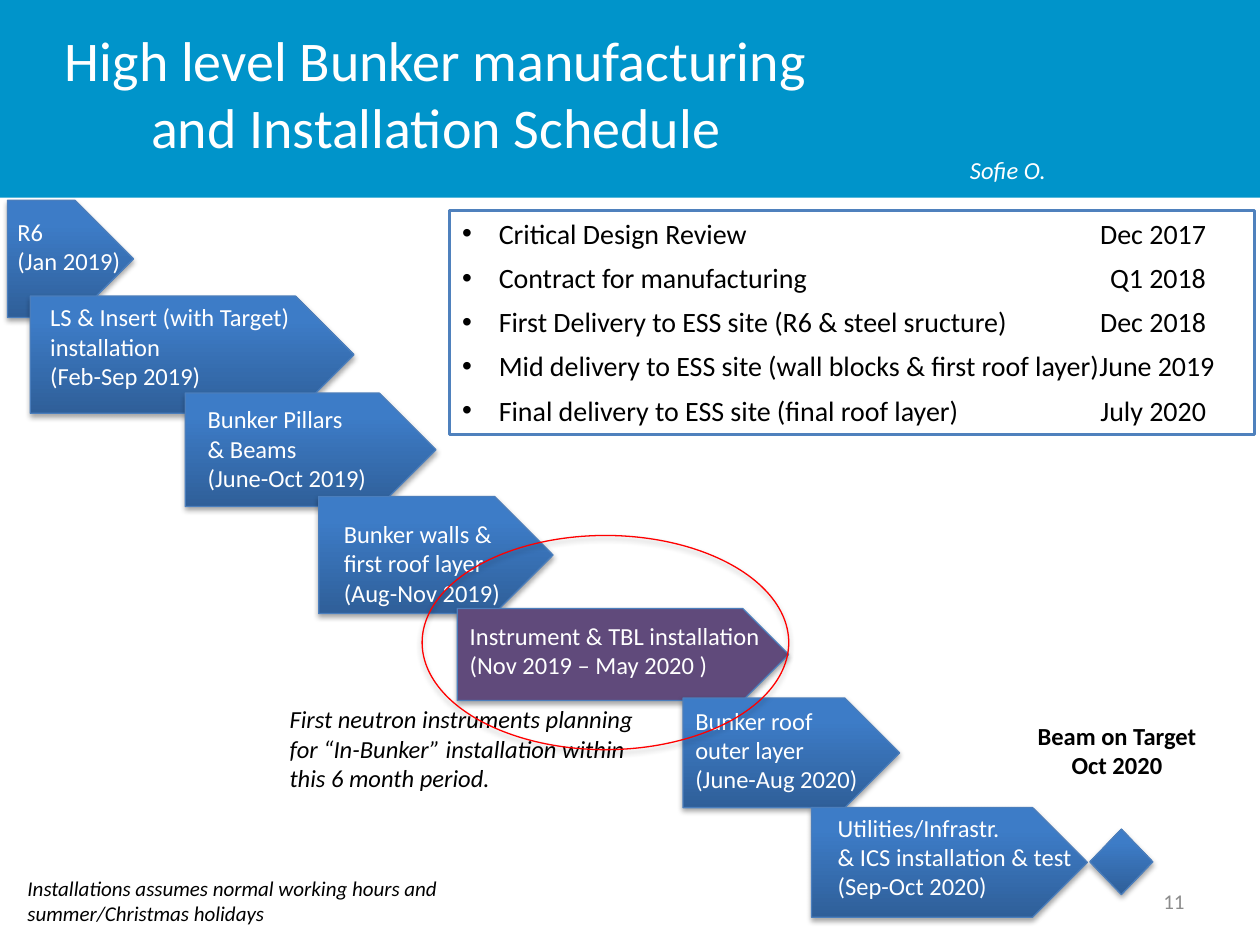
from pptx import Presentation
from pptx.dml.color import RGBColor
from pptx.enum.shapes import MSO_SHAPE as Shape
from pptx.enum.text import MSO_ANCHOR as Anchor, MSO_AUTO_SIZE as AutoSize, PP_ALIGN as Align
from pptx.oxml.ns import qn
from pptx.util import Inches, Pt
from lxml import etree

COLORS = {
    "header": "0094CA", "dark_blue": "2F5F99", "light_blue": "3D7CC7",
    "edge": "4B7EBC", "frame": "4F81BD", "purple": "604A7B", "red": "FF0000",
    "white": "FFFFFF", "black": "000000", "gray": "8C8C8C",
}
FONT = "Calibri"


def rgb(name):
    return RGBColor.from_string(COLORS[name])


class SlideBuilder:
    def __init__(self, deck):
        self.page = deck.slides.add_slide(deck.slide_layouts[5])

    def fill_text(self, box, text, size=14, color="white", bold=False, italic=False,
                  align=Align.LEFT, anchor=Anchor.TOP, wrap=True):
        frame = box.text_frame
        frame.text = text
        frame.word_wrap = wrap
        frame.auto_size = AutoSize.NONE
        frame.vertical_anchor = anchor
        for para in frame.paragraphs:
            para.alignment = align
            for span in para.runs:
                font = span.font
                font.name, font.size = FONT, Pt(size)
                font.bold, font.italic = bold, italic
                font.color.rgb = rgb(color)

    def title(self, text, area):
        box = self.page.shapes.title
        box.left, box.top, box.width, box.height = map(Inches, area)
        self.fill_text(box, text, size=32, align=Align.CENTER)

    def text(self, text, area, **style):
        box = self.page.shapes.add_textbox(*map(Inches, area))
        self.fill_text(box, text, **style)

    def shape(self, kind, area, fill=None, line=None, width=0.75, shadow=False):
        shape = self.page.shapes.add_shape(kind, *map(Inches, area))
        if not shadow:  # the theme style supplies the soft shadow
            shape.shadow.inherit = False
        if fill == "gradient":
            shape.fill.gradient()
            shape.fill.gradient_angle = 90
            stops = shape.fill.gradient_stops
            for stop, color, position in zip(stops, ("dark_blue", "light_blue"), (0, 0.8)):
                stop.color.rgb = rgb(color)
                stop.position = position
        elif fill:
            shape.fill.solid()
            shape.fill.fore_color.rgb = rgb(fill)
        else:
            shape.fill.background()
        if line:
            shape.line.color.rgb = rgb(line)
            shape.line.width = Pt(width)
        else:
            shape.line.fill.background()
        return shape

    def header(self, area):
        band = self.shape(Shape.RECTANGLE, area, fill="header")
        self.page.shapes.title.element.addprevious(band.element)

    def phase(self, text, arrow_area, text_area, fill="gradient"):
        self.shape(Shape.PENTAGON, arrow_area, fill=fill, line="edge", shadow=True)
        self.text(text, text_area, wrap=False)

    def milestones(self, rows, area, date_edge):
        box = self.shape(Shape.RECTANGLE, area, line="frame", width=1.75)
        self.fill_text(box, "\n".join("\t".join(row) for row in rows), size=16, color="black")
        for index, para in enumerate(box.text_frame.paragraphs):
            if index:
                para.space_before = Pt(6)
            props = para._p.get_or_add_pPr()
            props.set("marL", str(Inches(0.29)))
            props.set("indent", str(-Inches(0.29)))
            etree.SubElement(props, qn("a:buFont"), typeface="Arial")
            etree.SubElement(props, qn("a:buChar"), char="•")
            tabs = etree.SubElement(props, qn("a:tabLst"))
            etree.SubElement(tabs, qn("a:tab"), pos=str(Inches(date_edge)), algn="r")


# Label, arrow area, label area, fill
PHASES = [
    ("R6\n(Jan 2019)", (0.06, 1.59, 1, 0.93), (0.04, 1.67, 1.02, 0.57), "gradient"),
    ("LS & Insert (with Target)\ninstallation\n(Feb-Sep 2019)",
     (0.24, 2.35, 2.57, 0.93), (0.3, 2.35, 2.18, 0.81), "gradient"),
    ("Bunker Pillars\n& Beams\n(June-Oct 2019)",
     (1.47, 3.12, 1.99, 0.9), (1.55, 3.16, 1.47, 0.81), "gradient"),
    ("Bunker walls &\nfirst roof layer\n(Aug-Nov 2019)",
     (2.53, 3.94, 1.86, 0.93), (2.63, 4.07, 1.45, 0.81), "gradient"),
    ("Instrument & TBL installation\n(Nov 2019 – May 2020 )",
     (3.63, 4.83, 2.63, 0.73), (3.63, 4.88, 2.53, 0.57), "purple"),
    ("Bunker roof\nouter layer\n(June-Aug 2020)",
     (5.42, 5.54, 1.72, 0.87), (5.42, 5.55, 1.5, 0.81), "gradient"),
    ("Utilities/Infrastr.\n& ICS installation & test\n(Sep-Oct 2020)",
     (6.44, 6.41, 2.19, 0.87), (6.55, 6.4, 2.08, 0.81), "gradient"),
]
MILESTONES = [
    ("Critical Design Review", "Dec 2017"),
    ("Contract for manufacturing", "Q1 2018"),
    ("First Delivery to ESS site (R6 & steel sructure)", "Dec 2018"),
    ("Mid delivery to ESS site (wall blocks & first roof layer)", "June 2019"),
    ("Final delivery to ESS site (final roof layer)", "July 2020"),
]


def main():
    deck = Presentation()
    deck.slide_width, deck.slide_height = Inches(10), Inches(7.5)
    slide = SlideBuilder(deck)

    # Header
    slide.header((0, 0, 10, 1.57))
    slide.title("High level Bunker manufacturing and Installation Schedule",
                (0.32, 0.15, 6.28, 1.18))

    # Cascade of phases, ending at the beam milestone
    for label, arrow_area, text_area, fill in PHASES:
        slide.phase(label, arrow_area, text_area, fill)
    slide.shape(Shape.DIAMOND, (8.65, 6.58, 0.5, 0.52), fill="gradient", line="edge", shadow=True)
    slide.text("Beam on Target\nOct 2020", (8.06, 5.67, 1.61, 0.57),
               color="black", bold=True, align=Align.CENTER)

    # Remarks
    slide.text("First neutron instruments planning for “In-Bunker” installation "
               "within this 6 month period.", (2.2, 5.54, 3, 0.81), color="black", italic=True)
    slide.text("Installations assumes normal working hours and\nsummer/Christmas holidays",
               (0.12, 6.9, 3.53, 0.71), size=12, color="black", italic=True, wrap=False)
    slide.shape(Shape.OVAL, (3.35, 4.25, 2.91, 1.7), line="red", shadow=True)
    slide.text("Sofie O.", (7.6, 1.18, 0.86, 0.34), italic=True, wrap=False)

    # Delivery milestones
    slide.milestones(MILESTONES, (3.57, 1.67, 6.39, 1.78), date_edge=6.06)

    # Page number
    slide.text("11", (7.17, 6.95, 2.33, 0.4), size=12, color="gray",
               align=Align.RIGHT, anchor=Anchor.MIDDLE)

    deck.save("out.pptx")


if __name__ == "__main__":
    main()
